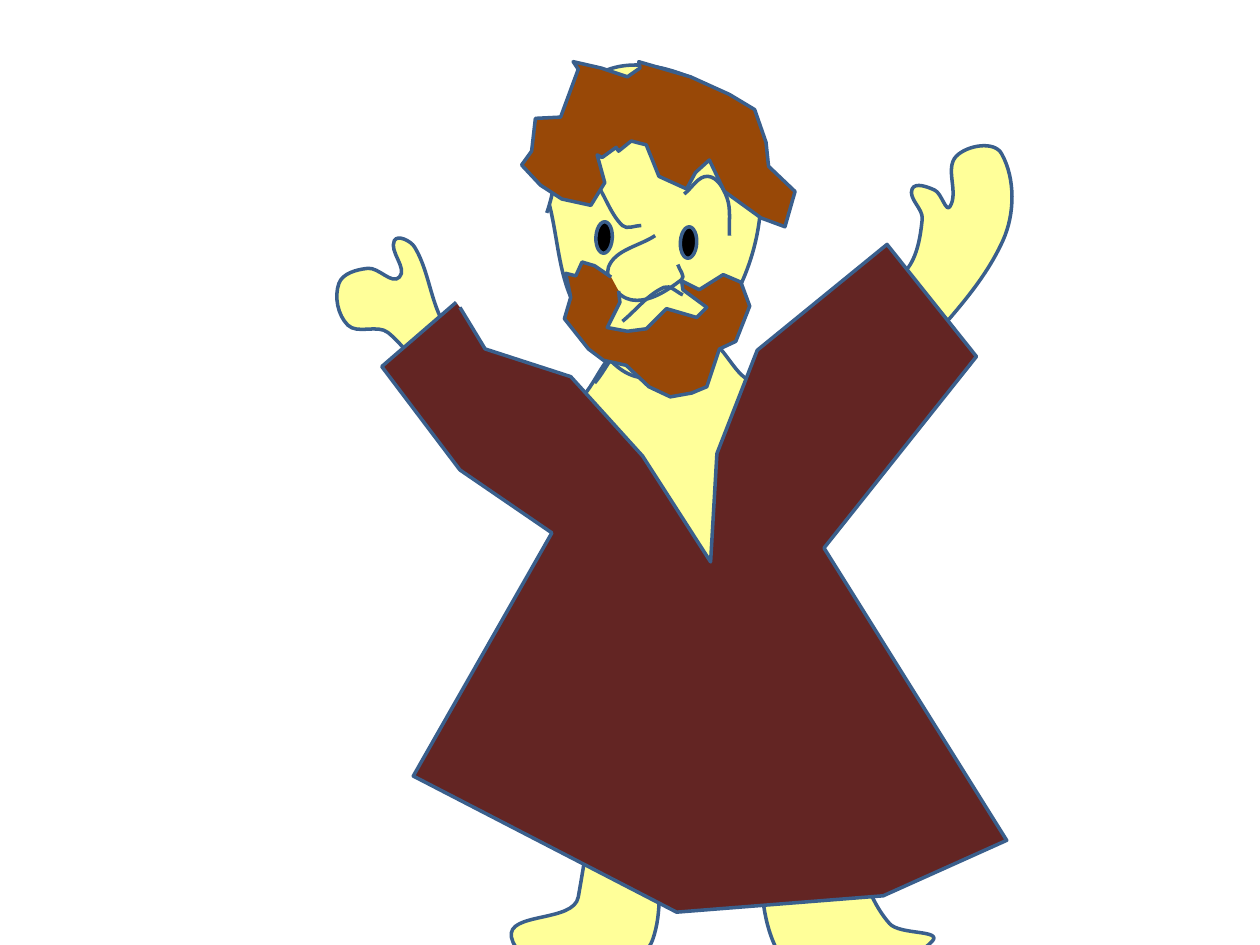
from math import cos, dist, hypot, radians, sin

from lxml.etree import SubElement
from pptx import Presentation
from pptx.dml.color import RGBColor
from pptx.enum.shapes import MSO_SHAPE
from pptx.oxml.ns import qn
from pptx.util import Cm, Pt

SKIN = RGBColor(0xFF, 0xFF, 0x99)
ROBE = RGBColor(0x63, 0x25, 0x23)
HAIR = RGBColor(0x98, 0x48, 0x07)
BLACK = RGBColor(0, 0, 0)
OUTLINE = RGBColor(0x3A, 0x5F, 0x8C)
UNIT = Cm(2.54)  # points below are in inches
TILT = 2.9

# Smooth outlines: points the curve passes through
BODY = [
    (4.86, 2.81), (4.46, 3.22), (3.59, 2.66), (3.29, 1.96), (3.13, 1.91), (3.17, 2.2),
    (2.92, 2.13), (2.69, 2.25), (2.76, 2.58), (3.08, 2.64), (3.56, 3.23), (4.63, 4.22),
    (4.59, 7.12), (4.06, 7.44), (4.71, 7.68), (5.18, 7.46), (5.28, 6.07), (5.87, 6.05),
    (6.19, 7.58), (6.8, 7.62), (7.4, 7.47), (7.06, 7.33), (6.82, 6.81), (6.31, 4.01),
    (7.16, 2.97), (7.96, 1.91), (7.95, 1.22), (7.59, 1.24), (7.54, 1.64), (7.42, 1.51),
    (7.24, 1.5), (7.32, 1.74), (7.17, 2.17), (6.03, 3.02), (5.6, 2.68), (5.03, 2.68),
    (4.72, 3.04)]
HEAD = [(4.36, 1.62), (4.57, 2.44), (5.12, 3), (5.76, 2.48), (6.04, 1.56), (5.77, 0.78),
        (4.73, 0.6), (4.34, 1.69)]
LEFT_BROW = [(4.52, 1.49), (4.65, 1.37), (4.94, 1.79), (5.09, 1.79)]
RIGHT_BROW = [(5.43, 1.54), (5.62, 1.4), (5.77, 1.57), (5.79, 1.87)]
MOUTH = [(5.42, 2.34), (5.27, 2.28), (4.94, 2.55)]
NOSE = [(5.2, 1.87), (4.83, 2.12), (5.01, 2.38), (5.41, 2.22), (5.38, 2.1)]

# Straight-sided outlines: corner points
GOWN = [
    (3.62, 2.4), (3.03, 2.91), (3.65, 3.73), (4.38, 4.23), (3.28, 6.16), (5.37, 7.24),
    (7.01, 7.11), (7.99, 6.67), (6.54, 4.35), (7.75, 2.83), (7.04, 1.94), (6.01, 2.78),
    (5.69, 3.6), (5.64, 4.46), (5.1, 3.62), (4.53, 2.99), (3.85, 2.77), (3.65, 2.44)]
HAIRSTYLE = [
    (4.89, 1.17), (4.78, 1.25), (4.74, 1.23), (4.8, 1.45), (4.69, 1.63), (4.46, 1.58),
    (4.29, 1.47), (4.14, 1.31), (4.22, 1.2), (4.25, 0.94), (4.45, 0.93), (4.59, 0.55),
    (4.55, 0.49), (4.77, 0.54), (4.98, 0.61), (5.08, 0.54), (5.07, 0.49), (5.48, 0.61),
    (5.79, 0.75), (5.99, 0.87), (6.08, 1.13), (6.1, 1.32), (6.31, 1.52), (6.23, 1.8),
    (6.04, 1.73), (5.75, 1.52), (5.63, 1.27), (5.52, 1.37), (5.45, 1.5), (5.23, 1.4),
    (5.13, 1.15), (5.01, 1.12), (4.91, 1.2)]
BEARD = [
    (4.85, 2.2), (4.72, 2.11), (4.62, 2.08), (4.57, 2.19), (4.49, 2.17), (4.53, 2.36),
    (4.48, 2.53), (4.67, 2.77), (4.79, 2.86), (4.97, 2.9), (5.15, 3.07), (5.32, 3.15),
    (5.49, 3.12), (5.61, 3.07), (5.71, 2.77), (5.84, 2.71), (5.95, 2.43), (5.88, 2.24),
    (5.74, 2.18), (5.55, 2.3), (5.41, 2.23), (5.42, 2.3), (5.61, 2.44), (5.53, 2.52),
    (5.29, 2.45), (5.13, 2.61), (4.98, 2.63), (4.82, 2.6), (4.92, 2.4), (4.91, 2.31)]
EYES = [(4.73, 1.76), (5.4, 1.8)]
EYE_SIZE = (0.13, 0.25)


def spin(x, y, degrees):
    c, s = cos(radians(degrees)), sin(radians(degrees))
    return x * c - y * s, x * s + y * c


def paint(part, fill=None):
    part.shadow.inherit = False
    if fill is None:
        part.fill.background()
    else:
        part.fill.solid()
        part.fill.fore_color.rgb = fill
    part.line.color.rgb = OUTLINE
    part.line.width = Pt(2)


def with_handles(points):
    """Put two Bezier handles, along the neighbours' direction, between points."""
    directions = []
    for i in range(len(points)):
        before, after = points[max(i - 1, 0)], points[min(i + 1, len(points) - 1)]
        dx, dy = after[0] - before[0], after[1] - before[1]
        directions.append((dx / hypot(dx, dy), dy / hypot(dx, dy)))
    result = [points[0]]
    for i in range(len(points) - 1):
        (x1, y1), (x2, y2) = points[i], points[i + 1]
        (dx1, dy1), (dx2, dy2) = directions[i], directions[i + 1]
        reach = dist(points[i], points[i + 1]) / 3
        result += [(x1 + dx1 * reach, y1 + dy1 * reach),
                   (x2 - dx2 * reach, y2 - dy2 * reach), (x2, y2)]
    return result


def bend(outline):
    """Turn each run of three straight segments into one Bezier segment."""
    path = outline._element.find(".//" + qn("a:path"))
    steps = path.findall(qn("a:lnTo"))
    for i in range(0, len(steps), 3):
        curve = SubElement(path, qn("a:cubicBezTo"))
        for step in steps[i:i + 3]:
            curve.append(step[0])
            path.remove(step)


def draw(points, fill=None, curved=False, closed=False, angle=TILT):
    """Draw the points upright, then tilt the outline back into place."""
    if curved:
        points = with_handles(points)
    upright = [spin(x * UNIT, y * UNIT, -angle) for x, y in points]
    builder = figure.build_freeform(*upright[0])
    builder.add_line_segments(upright[1:], close=closed)
    outline = builder.convert_to_shape()
    if curved:
        bend(outline)
    half_w, half_h = outline.width / 2, outline.height / 2
    x, y = spin(outline.left + half_w, outline.top + half_h, angle)
    outline.left, outline.top = round(x - half_w), round(y - half_h)
    outline.rotation = angle
    paint(outline, fill)


presentation = Presentation()
presentation.slide_width, presentation.slide_height = Cm(25.4), Cm(19.05)
slide = presentation.slides.add_slide(presentation.slide_layouts[6])
figure = slide.shapes.add_group_shape().shapes

# Body, gown and head
draw(BODY, SKIN, curved=True)
draw(GOWN, ROBE)
draw(HEAD, SKIN, curved=True)

# Face
draw(LEFT_BROW, curved=True)
draw(RIGHT_BROW, curved=True)
for corner in EYES:
    eye = figure.add_shape(MSO_SHAPE.OVAL, *(round(v * UNIT) for v in corner + EYE_SIZE))
    eye.rotation = TILT
    paint(eye, BLACK)
draw(MOUTH, curved=True, angle=170)
draw(HAIRSTYLE, HAIR, closed=True)
draw(NOSE, curved=True)
draw(BEARD, HAIR)

presentation.save("out.pptx")
